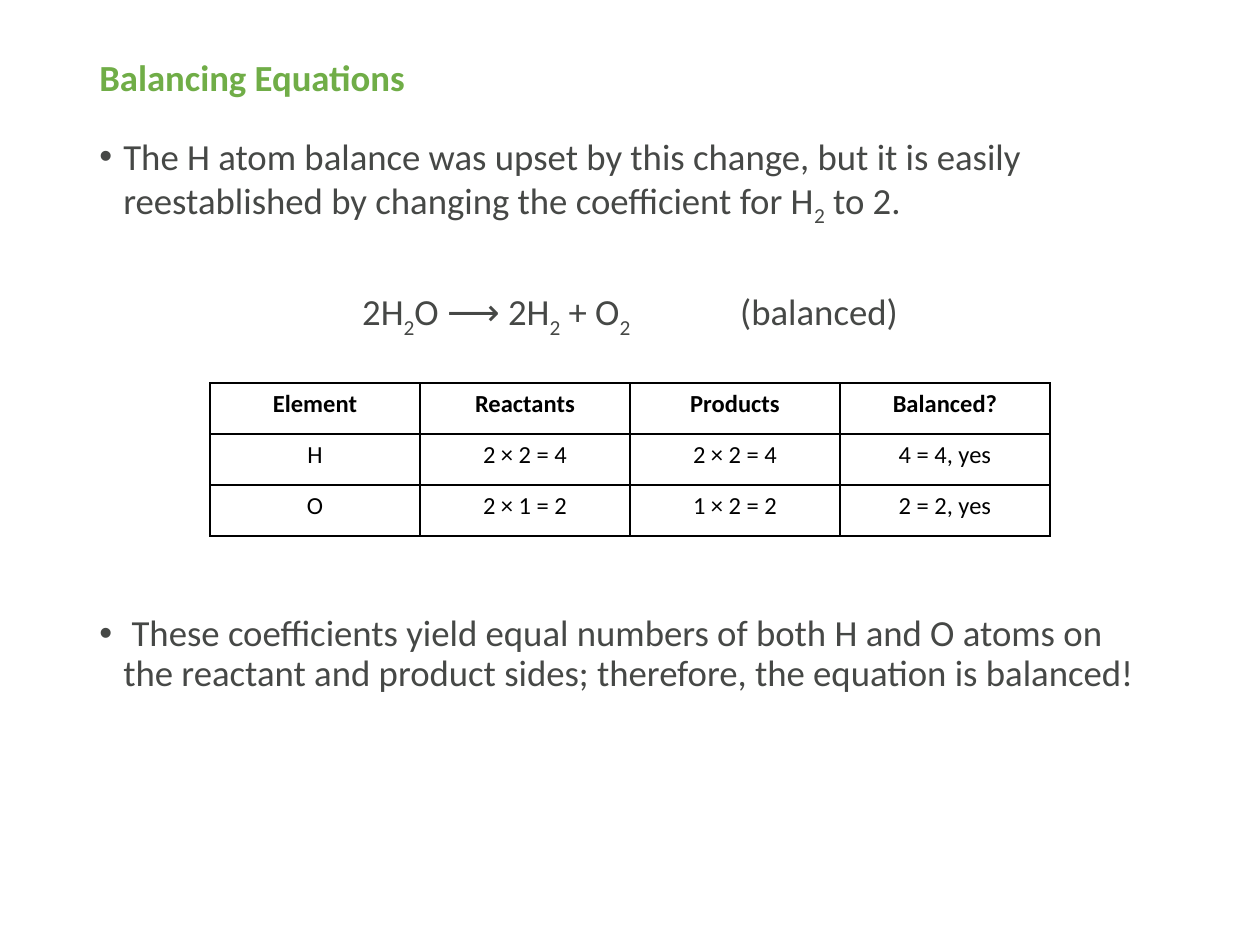
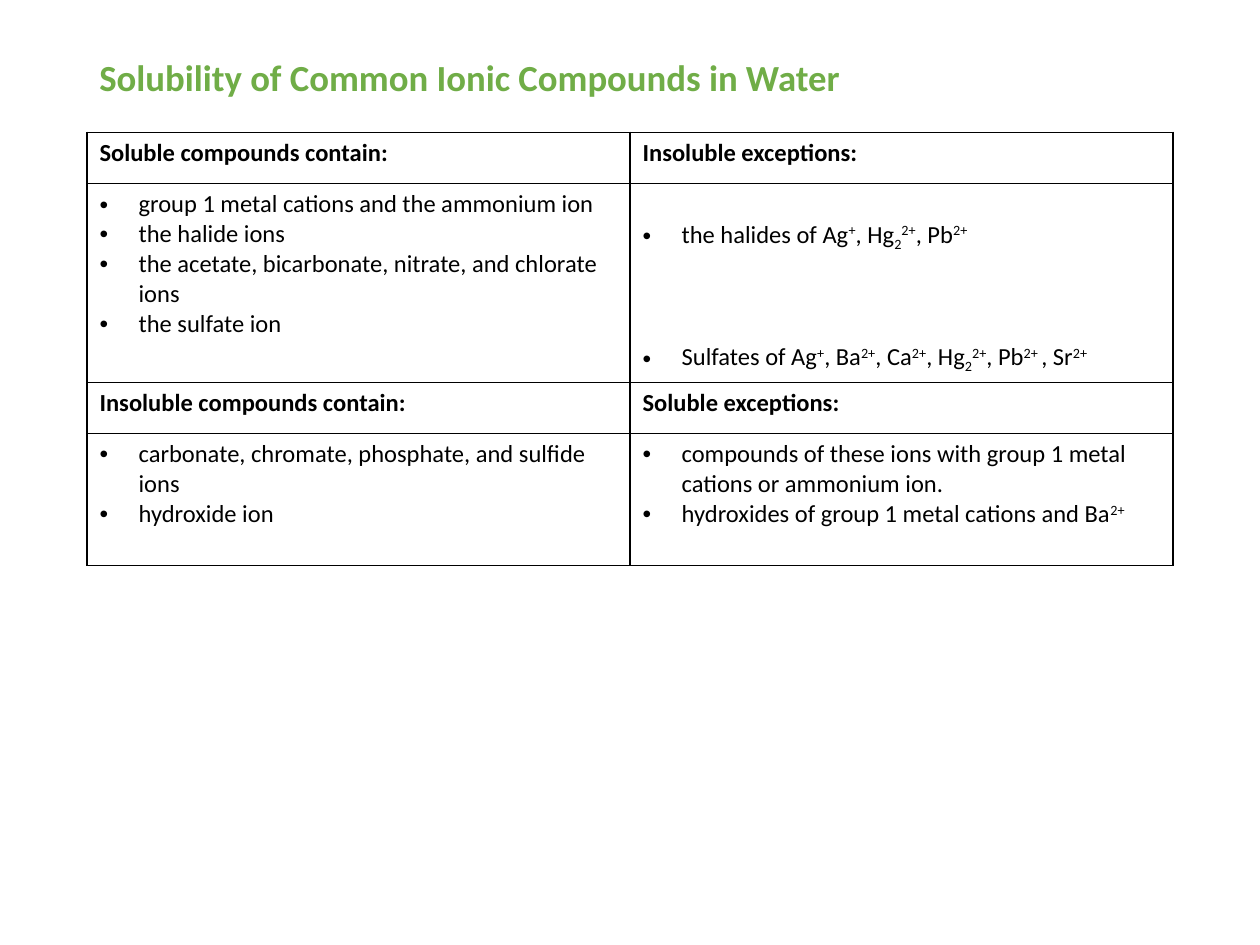
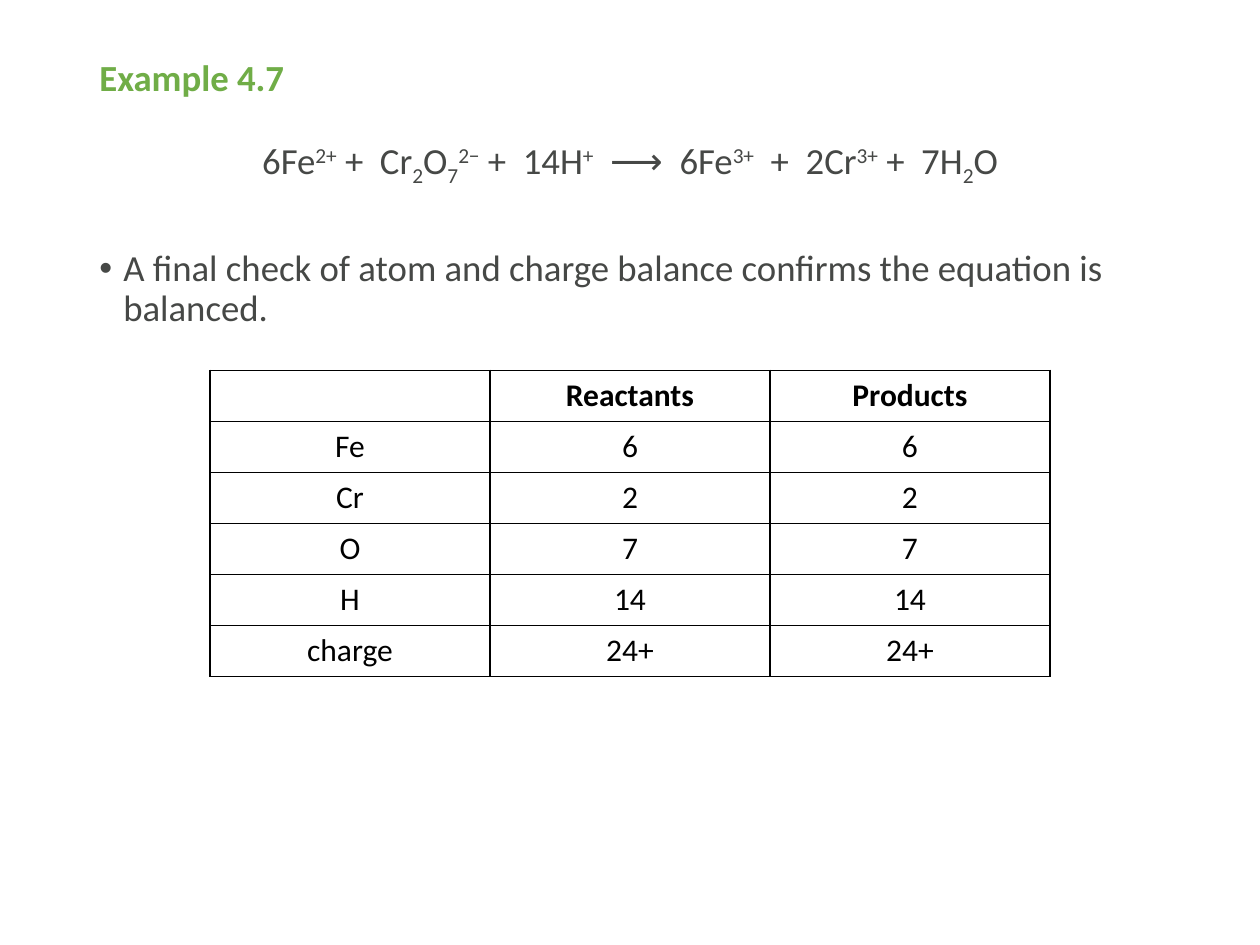
from dataclasses import dataclass

from lxml import etree
from pptx import Presentation
from pptx.dml.color import RGBColor
from pptx.enum import text
from pptx.oxml import ns
from pptx.util import Inches, Length, Pt

COLORS = {"title": "70AD47", "body": "464846", "table": "000000", "page": "FFFFFF"}
FONT = "Calibri"
BODY_SIZE = 21

# Grid of the 10 by 7.5 inch slide
WIDTH, HEIGHT = Inches(10), Inches(7.5)
COLUMNS, ROWS = 100, 75
LEFT, CONTENT_WIDTH = 6.9, 86.2
TITLE_TOP, TITLE_ROWS, CONTENT_TOP = 4, 4.6, 10.5
TABLE_LEFT, TABLE_WIDTH = 16.67, 66.67
TABLE_ROW = 4.05

# Markup inside braces: _ subscript, ^ superscript, ~ wide space
BASELINES = {"_": "-25000", "^": "30000"}
WIDE_SPACE = "475"


@dataclass(frozen=True)
class Style:
    size: float
    color: str
    bold: bool = False


@dataclass(frozen=True)
class Para:
    words: str
    indent: float = 0  # inches; an indented paragraph has a bullet
    centered: bool = False
    before: float = 0
    spacing: float = 1.0
    tab: float = 0


@dataclass(frozen=True)
class Cell:
    paras: tuple[Para, ...]
    bold: bool = False
    top_margin: float = 0.05


@dataclass(frozen=True)
class Grid:
    left: float
    top: float
    width: float
    heights: list[float]
    size: float
    rows: list[list[Cell]]


TITLE = Style(BODY_SIZE, "title", bold=True)
BODY = Style(BODY_SIZE, "body")


def across(columns: float) -> Length:
    return Length(round(WIDTH * columns / COLUMNS))


def down(rows: float) -> Length:
    return Length(round(HEIGHT * rows / ROWS))


def add_xml(parent, tag: str, **attributes: str):
    return etree.SubElement(parent, ns.qn(tag), attributes)


# Text
def write_runs(paragraph, words: str, style: Style) -> None:
    for index, piece in enumerate(words.replace("}", "{").split("{")):
        if not piece:
            continue
        mark = piece[0] if index % 2 else ""
        run = paragraph.add_run()
        run.text = " " if mark == "~" else piece[len(mark):]
        run.font.name = FONT
        run.font.size = Pt(style.size)
        run.font.bold = style.bold
        run.font.color.rgb = RGBColor.from_string(COLORS[style.color])
        if mark in BASELINES:
            run.font._element.set("baseline", BASELINES[mark])
        elif mark:
            run.font._element.set("spc", WIDE_SPACE)


def write_paragraphs(frame, paras: tuple[Para, ...], style: Style) -> None:
    for index, para in enumerate(paras):
        paragraph = frame.add_paragraph() if index else frame.paragraphs[0]
        paragraph.line_spacing = para.spacing
        if para.centered:
            paragraph.alignment = text.PP_ALIGN.CENTER
        if para.before:
            paragraph.space_before = Pt(para.before)
        properties = paragraph._p.get_or_add_pPr()
        if para.indent:
            properties.set("marL", str(Inches(para.indent)))
            properties.set("indent", str(-Inches(para.indent)))
            add_xml(properties, "a:buFont", typeface="Arial")
            add_xml(properties, "a:buChar", char="•")
        if para.tab:
            stops = add_xml(properties, "a:tabLst")
            add_xml(stops, "a:tab", pos=str(Inches(para.tab)), algn="l")
        write_runs(paragraph, para.words, style)


def add_text(slide, top: float, height: float, paras: tuple[Para, ...], style: Style):
    box = slide.shapes.add_textbox(
        across(LEFT), down(top), across(CONTENT_WIDTH), down(height))
    box.text_frame.word_wrap = True
    write_paragraphs(box.text_frame, paras, style)
    return box.text_frame


# Tables
def add_borders(cell) -> None:
    properties = cell._tc.get_or_add_tcPr()
    for position, side in enumerate(("a:lnL", "a:lnR", "a:lnT", "a:lnB")):
        line = etree.Element(ns.qn(side), {"w": str(Pt(1))})
        fill = add_xml(line, "a:solidFill")
        add_xml(fill, "a:srgbClr", val=COLORS["table"])
        properties.insert(position, line)


def add_grid(slide, grid: Grid) -> None:
    count = len(grid.rows[0])
    table = slide.shapes.add_table(
        len(grid.rows), count, across(grid.left), down(grid.top),
        across(grid.width), down(sum(grid.heights))).table
    table.first_row = table.horz_banding = False
    for column in table.columns:
        column.width = across(grid.width / count)
    for row, height, entries in zip(table.rows, grid.heights, grid.rows):
        row.height = down(height)
        for cell, entry in zip(row.cells, entries):
            cell.fill.background()
            cell.margin_top = Inches(entry.top_margin)
            add_borders(cell)
            write_paragraphs(cell.text_frame, entry.paras,
                             Style(grid.size, "table", entry.bold))


def add_balance(slide, top: float, size: float, rows: list[list[str]]) -> None:
    cells = [[Cell((Para(words, centered=True),), bold=index == 0) for words in row]
             for index, row in enumerate(rows)]
    add_grid(slide, Grid(TABLE_LEFT, top, TABLE_WIDTH,
                         [TABLE_ROW] * len(rows), size, cells))


# Parts shared by the slides
def start_slide(deck, title: str):
    slide = deck.slides.add_slide(deck.slide_layouts[6])
    slide.background.fill.solid()
    slide.background.fill.fore_color.rgb = RGBColor.from_string(COLORS["page"])
    frame = add_text(slide, TITLE_TOP, TITLE_ROWS, (Para(title, spacing=0.9),), TITLE)
    frame.vertical_anchor = text.MSO_ANCHOR.MIDDLE
    return slide


def point(words: str, before: float = 0) -> Para:
    return Para(words, indent=0.19, before=before, spacing=0.9)


def equation(words: str, before: float = 0, tab: float = 0) -> Para:
    return Para(words, centered=True, before=before, spacing=0.9, tab=tab)


def heading(words: str) -> Cell:
    return Cell((Para(words),), bold=True)


def item(words: str, before: float = 0) -> Para:
    return Para(words, indent=0.31, before=before)


# Slides
def build_balancing(deck) -> None:
    slide = start_slide(deck, "Balancing Equations")
    add_text(slide, CONTENT_TOP, 49.8, (
        point("The H atom balance was upset by this change, but it is easily "
              "reestablished by changing the coefficient for H{_2} to 2."),
        equation("2H{_2}O ⟶ 2H{_2} + O{_2}\t(balanced)", before=38, tab=3),
        point(" These coefficients yield equal numbers of both H and O atoms on the "
              "reactant and product sides; therefore, the equation is balanced!",
              before=160),
    ), BODY)
    add_balance(slide, 30.4, 14, [
        ["Element", "Reactants", "Products", "Balanced?"],
        ["H", "2 × 2 = 4", "2 × 2 = 4", "4 = 4, yes"],
        ["O", "2 × 1 = 2", "1 × 2 = 2", "2 = 2, yes"],
    ])


def build_solubility(deck) -> None:
    slide = start_slide(deck, "Solubility of Common Ionic Compounds in Water")
    soluble = Cell((
        item("group 1 metal cations and the ammonium ion"),
        item("the halide ions"),
        item("the acetate, bicarbonate, nitrate, and chlorate ions"),
        item("the sulfate ion"),
    ))
    insoluble_exceptions = Cell((
        item("the halides of Ag{^+}, Hg{_2}{^2+}, Pb{^2+}"),
        item("Sulfates of Ag{^+}, Ba{^2+}, Ca{^2+}, Hg{_2}{^2+}, Pb{^2+ }, Sr{^2+}",
             before=51),
    ), top_margin=0.29)
    insoluble = Cell((
        item("carbonate, chromate, phosphate, and sulfide ions"),
        item("hydroxide ion"),
    ))
    soluble_exceptions = Cell((
        item("compounds of these ions with group 1 metal cations or ammonium ion."),
        item("hydroxides of group 1 metal cations and Ba{^2+}"),
    ))
    add_grid(slide, Grid(
        LEFT, CONTENT_TOP, CONTENT_WIDTH, [TABLE_ROW, 15.7, TABLE_ROW, 10.5], 14, [
            [heading("Soluble compounds contain:"), heading("Insoluble exceptions:")],
            [soluble, insoluble_exceptions],
            [heading("Insoluble compounds contain:"), heading("Soluble exceptions:")],
            [insoluble, soluble_exceptions],
        ]))


def build_example(deck) -> None:
    slide = start_slide(deck, "Example 4.7")
    add_text(slide, CONTENT_TOP, 41.5, (
        equation("6Fe{^2+} +{~}Cr{_2}O{_7}{^2−} +{~}14H{^+}{~}⟶{~}"
                 "6Fe{^3+}{~}+{~}2Cr{^3+} +{~}7H{_2}O"),
        point("A final check of atom and charge balance confirms the equation is "
              "balanced.", before=38),
    ), BODY)
    add_balance(slide, 29.4, 18, [
        ["", "Reactants", "Products"],
        ["Fe", "6", "6"],
        ["Cr", "2", "2"],
        ["O", "7", "7"],
        ["H", "14", "14"],
        ["charge", "24+", "24+"],
    ])


def main() -> None:
    deck = Presentation()
    deck.slide_width, deck.slide_height = WIDTH, HEIGHT
    for build in (build_balancing, build_solubility, build_example):
        build(deck)
    deck.save("out.pptx")


if __name__ == "__main__":
    main()
